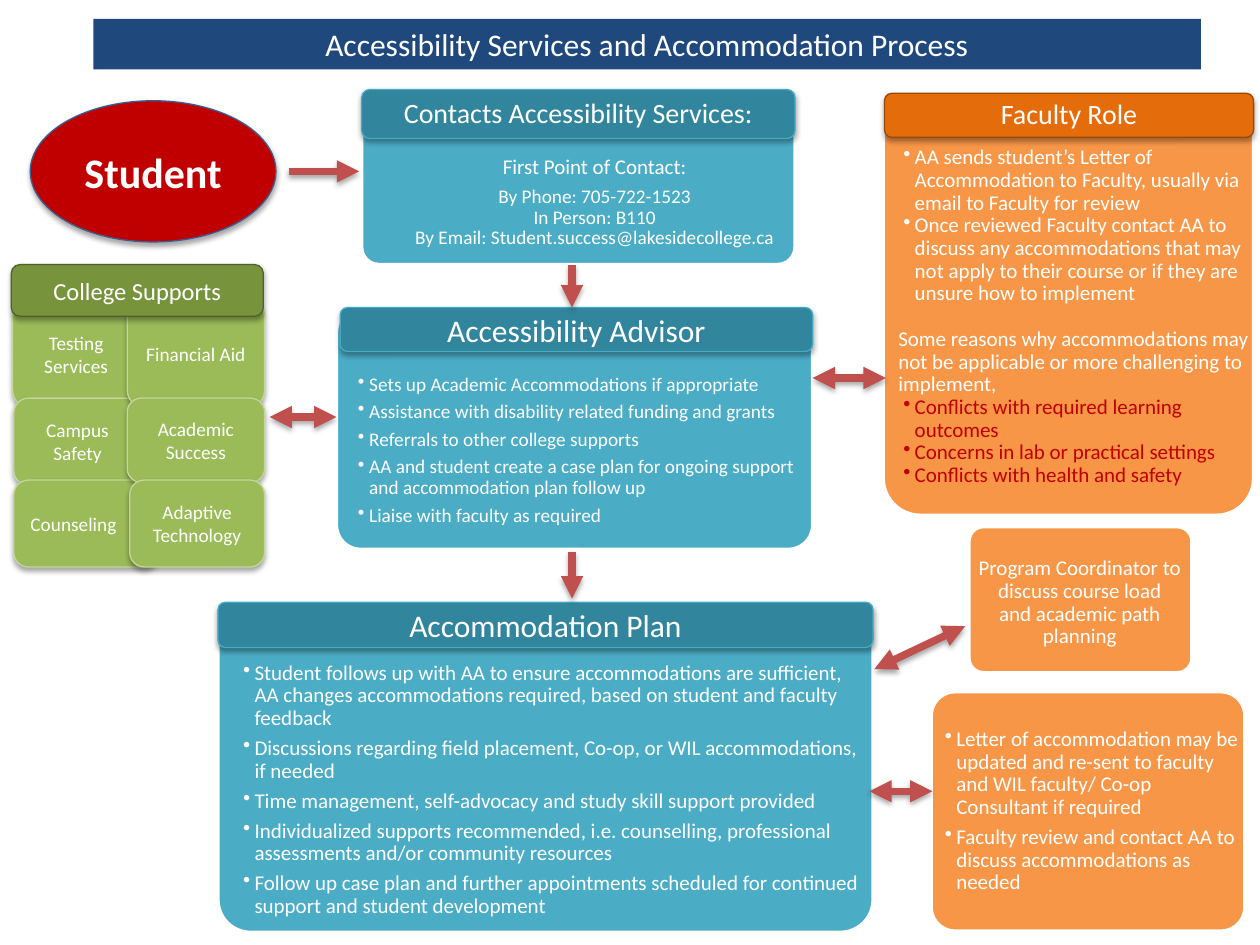
from lxml.etree import SubElement
from pptx import Presentation
from pptx.dml.color import RGBColor
from pptx.enum.shapes import MSO_CONNECTOR as CONNECTOR, MSO_SHAPE as SHAPE
from pptx.enum.text import MSO_ANCHOR as ANCHOR, MSO_AUTO_SIZE as AUTO, PP_ALIGN as ALIGN
from pptx.oxml.ns import qn
from pptx.util import Inches, Pt

color = RGBColor.from_string
prs = Presentation()
prs.slide_width, prs.slide_height = Inches(10), Inches(7.5)
slide = prs.slides.add_slide(prs.slide_layouts[5])
col, row = prs.slide_width / 100, prs.slide_height / 75
TEAL, ORANGE, GREEN, RED, WHITE = "4BACC6", "F79646", "9BBB59", "C00000", "FFFFFF"
DARK_TEAL, TEAL_EDGE = "31859C", "46AAC5"
raised = []


def box(place, fill, edge, kind=SHAPE.ROUNDED_RECTANGLE, weight=0.75):
    x, y, w, h = place
    shape = slide.shapes.add_shape(kind, int(x * col), int(y * row), int(w * col), int(h * row))
    shape.shadow.inherit = False
    shape.fill.solid()
    shape.fill.fore_color.rgb = color(fill)
    shape.line.color.rgb = color(edge)
    shape.line.width = Pt(weight)
    return shape


def write(frame, lines, size, align=ALIGN.CENTER, ink=WHITE, bold=False,
          bullet=False, spacing=0.9, after=0, before=0, indent=0):
    for line in lines:
        para = frame.paragraphs[0]
        if para.runs:
            para = frame.add_paragraph()
        para.alignment = align
        para.line_spacing = spacing
        para.space_before, para.space_after = Pt(before), Pt(after)
        props = para._p.get_or_add_pPr()
        if bullet:
            props.set("marL", str(Inches(0.19)))
            props.set("indent", str(Inches(-0.09)))
            SubElement(props, qn("a:buChar")).set("char", "•")
        elif indent:
            props.set("marL", str(Inches(indent)))
        run = para.add_run()
        run.text = line
        run.font.name, run.font.size, run.font.bold = "Calibri", Pt(size), bold
        run.font.color.rgb = color(ink)


title = slide.shapes.title
title.left, title.top = int(7.4 * col), int(1.5 * row)
title.width, title.height = int(87.9 * col), int(4 * row)
title.fill.solid()
title.fill.fore_color.rgb = color("1F497D")
title.text_frame.auto_size = AUTO.NONE
title.text_frame.vertical_anchor = ANCHOR.MIDDLE
write(title.text_frame, ["Accessibility Services and Accommodation Process"], 18, spacing=1)

supports = [
    ((1, 23.8, 10.1, 8.6), ["Testing Services"], ALIGN.CENTER),
    ((1.1, 31.6, 10.1, 6.9), ["Campus Safety"], ALIGN.CENTER),
    ((1.1, 38.1, 11.5, 6.9), ["Counseling"], ALIGN.LEFT),
    ((10.1, 23.8, 10.9, 8.6), ["Financial Aid"], ALIGN.CENTER),
    ((10.1, 31.6, 10.9, 6.7), ["Academic Success"], ALIGN.CENTER),
    ((10.3, 38.1, 10.7, 6.9), ["Adaptive", "Technology"], ALIGN.CENTER),
]
for place, lines, align in supports:
    support = box(place, GREEN, "C3D69B")
    write(support.text_frame, lines, 11, align, spacing=1)
    raised.append(support)

student = box((2.4, 8, 19.5, 11.2), RED, "376092", SHAPE.OVAL)
write(student.text_frame, ["Student"], 24, bold=True, spacing=1)
raised.append(student)

CENTERED = dict(size=12)
SMALL = dict(size=11)
BULLETS = dict(size=12, align=ALIGN.LEFT, bullet=True)
SPACED = dict(BULLETS, after=4.2)
ADVISOR = dict(BULLETS, size=11, after=3.85)
panels = [
    ((28.7, 7.3, 34.4, 13.7), TEAL, (29.9, 11.5, 34.6, 9.2), [
        (["First Point of Contact:"], dict(CENTERED, after=4.2)),
        (["By Phone: 705-722-1523", "In Person: B110",
          "By Email: Student.success@lakesidecollege.ca"], SMALL),
    ]),
    ((26.7, 24.4, 37.8, 19.2), TEAL, (27.4, 27.9, 37.1, 15.7), [
        (["Sets up Academic Accommodations if appropriate",
          "Assistance with disability related funding and grants",
          "Referrals to other college supports",
          "AA and student create a case plan for ongoing support and accommodation plan follow up",
          "Liaise with faculty as required"], ADVISOR),
    ]),
    ((17.3, 48.1, 52, 25.9), TEAL, (18.3, 52.2, 50.1, 21), [
        (["Student follows up with AA to ensure accommodations are sufficient, AA changes "
          "accommodations required, based on student and faculty feedback",
          "Discussions regarding field placement, Co-op, or WIL accommodations, if needed",
          "Time management, self-advocacy and study skill support provided",
          "Individualized supports recommended, i.e. counselling, professional assessments "
          "and/or community resources",
          "Follow up case plan and further appointments scheduled for continued support "
          "and student development"], SPACED),
    ]),
    ((70.1, 7.9, 29.4, 33), ORANGE, (70.7, 5.3, 30, 39.7), [
        (["AA sends student’s Letter of Accommodation to Faculty, usually via email to "
          "Faculty for review",
          "Once reviewed Faculty contact AA to discuss any accommodations that may not apply "
          "to their course or if they are unsure how to implement"], BULLETS),
        (["Some reasons why accommodations may not be applicable or more challenging to "
          "implement,"], dict(size=12, align=ALIGN.LEFT, before=13, indent=0.06)),
        (["Conflicts with required learning outcomes", "Concerns in lab or practical settings"],
         dict(BULLETS, ink=RED)),
        (["Conflicts with health and safety"], dict(SPACED, ink=RED)),
    ]),
    ((76.9, 41.8, 17.7, 11.6), ORANGE, (77.1, 42.6, 17.2, 10.5), [
        (["Program Coordinator to discuss course load", "and academic path planning"], CENTERED),
    ]),
    ((73.9, 54.9, 24.9, 19), ORANGE, (74, 56.6, 25, 15.6), [
        (["Letter of accommodation may be updated and re-sent to faculty and WIL faculty/ "
          "Co-op Consultant if required",
          "Faculty review and contact AA to discuss accommodations as needed"], SPACED),
    ]),
]
for place, fill, (x, y, w, h), passages in panels:
    panel = box(place, fill, WHITE, weight=2)
    panel.adjustments[0] = 0.1
    body = slide.shapes.add_textbox(int(x * col), int(y * row), int(w * col), int(h * row)).text_frame
    body.word_wrap = True
    body.vertical_anchor = ANCHOR.MIDDLE
    body.margin_left = body.margin_right = body.margin_top = body.margin_bottom = 0
    for lines, style in passages:
        write(body, lines, **style)

headings = [
    ((27, 24.4, 37.5, 3.5), DARK_TEAL, TEAL_EDGE, "Accessibility Advisor", dict(size=18, spacing=1)),
    ((28.7, 7.1, 34.4, 3.9), DARK_TEAL, TEAL_EDGE, "Contacts Accessibility Services:", dict(size=16, after=5.6)),
    ((17.3, 47.8, 52, 3.6), DARK_TEAL, TEAL_EDGE, "Accommodation Plan", dict(size=18, spacing=1)),
    ((70.2, 7.4, 29.3, 3.5), "E46C0A", "984807", "Faculty Role", dict(size=16, after=5.6)),
    ((0.9, 21, 20, 4.1), "77933C", "4F6228", "College Supports", dict(size=14, spacing=1)),
]
for place, fill, edge, words, style in headings:
    heading = box(place, fill, edge)
    write(heading.text_frame, [words], **style)
    raised.append(heading)

ONE_WAY, TWO_WAY = ["tailEnd"], ["headEnd", "tailEnd"]
arrows = [
    (22.9, 13.6, 28.5, 13.6, ONE_WAY),
    (21.4, 33.1, 26.7, 33.1, TWO_WAY),
    (45.4, 21, 45.4, 24.4, ONE_WAY),
    (45.4, 43.8, 45.4, 47.5, ONE_WAY),
    (69.4, 53.1, 76.6, 49.7, TWO_WAY),
    (69, 62.8, 74, 62.8, TWO_WAY),
    (64.5, 30, 70.3, 30, TWO_WAY),
]
for x1, y1, x2, y2, ends in arrows:
    arrow = slide.shapes.add_connector(
        CONNECTOR.STRAIGHT, int(x1 * col), int(y1 * row), int(x2 * col), int(y2 * row))
    arrow.line.color.rgb = color("C0504D")
    arrow.line.width = Pt(4.25)
    for end in ends:
        SubElement(arrow.line._get_or_add_ln(), qn(f"a:{end}")).set("type", "triangle")
    SubElement(arrow._element.spPr, qn("a:effectLst"))
    raised.append(arrow)

for item in raised:
    effects = item._element.spPr.find(qn("a:effectLst"))
    shadow = SubElement(effects, qn("a:outerShdw"), blurRad=str(Pt(3.1)), dist=str(Pt(1.8)),
                        dir="5400000", rotWithShape="0")
    black = SubElement(shadow, qn("a:srgbClr"), val="000000")
    SubElement(black, qn("a:alpha"), val="35000")

prs.save("out.pptx")
